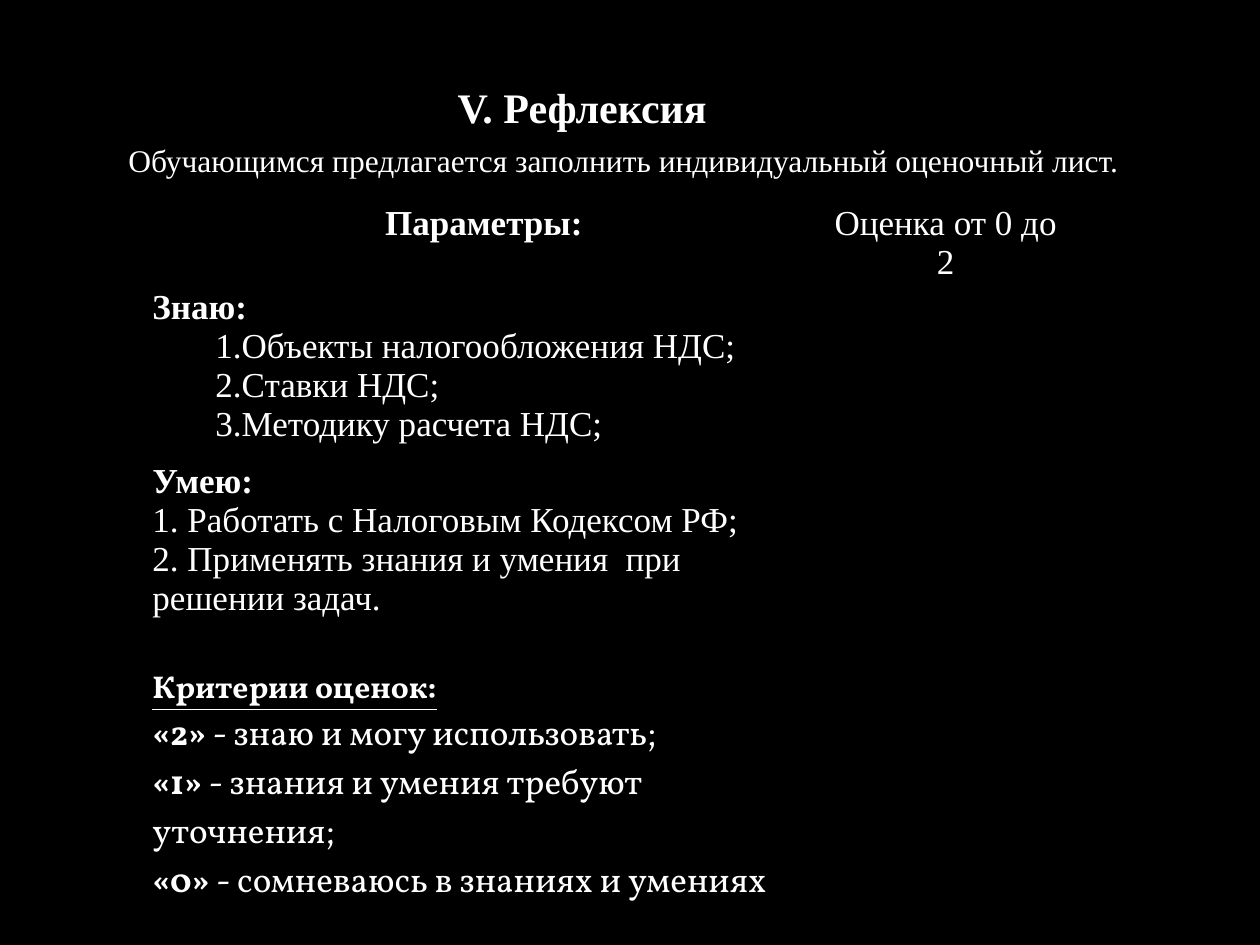
"""Builds the reflection slide with its self-assessment table."""
from lxml import etree
from pptx import Presentation
from pptx import util as u
from pptx.dml.color import RGBColor
from pptx.enum import text
from pptx.oxml.ns import qn

WHITE, BLACK = "FFFFFF", "000000"
SERIF, BOOK = "Times New Roman", "Vollkorn"
FIRST_LINE = u.Inches(0.49)


def color(hex_code):
    return RGBColor.from_string(hex_code)


def add_run(paragraph, words, size=20, bold=False, face=SERIF, underline=None):
    run = paragraph.add_run()
    run.text = words
    run.font.size, run.font.name = u.Pt(size), face
    run.font.bold, run.font.underline = bold, underline
    run.font.color.rgb = color(WHITE)


deck = Presentation()
deck.slide_width, deck.slide_height = u.Inches(10), u.Inches(7.5)
slide = deck.slides.add_slide(deck.slide_layouts[5])
slide.background.fill.solid()
slide.background.fill.fore_color.rgb = color(BLACK)

heading = slide.shapes.title
heading.left, heading.top = u.Inches(1.46), u.Inches(0.6)
heading.width, heading.height = u.Inches(5.83), u.Inches(0.5)
instruction = slide.shapes.add_textbox(
    u.Inches(0.43), u.Inches(1.07), u.Inches(9.21), u.Inches(0.4))
for box, words, size, bold, align in (
    (heading, "V. Рефлексия", 24, True, text.PP_ALIGN.CENTER),
    (instruction, "Обучающимся предлагается заполнить индивидуальный оценочный лист.",
     18, False, text.PP_ALIGN.LEFT),
):
    frame = box.text_frame
    frame.word_wrap = True
    frame.auto_size = text.MSO_AUTO_SIZE.NONE
    frame.vertical_anchor = text.MSO_ANCHOR.TOP
    line = frame.paragraphs[0]
    line.alignment = align
    line.space_before = u.Pt(0)
    line._p.get_or_add_pPr().set("indent", str(FIRST_LINE))
    add_run(line, words, size, bold)

columns, rows = (5.4, 1.93), (0.67, 1.38, 3.26)
sheet = slide.shapes.add_table(
    len(rows), len(columns), u.Inches(1.14), u.Inches(1.62),
    u.Inches(sum(columns)), u.Inches(sum(rows))).table
sheet.first_row = sheet.horz_banding = False
for column, width in zip(sheet.columns, columns):
    column.width = u.Inches(width)
for row, height in zip(sheet.rows, rows):
    row.height = u.Inches(height)

for cell in sheet.iter_cells():
    cell.margin_left = cell.margin_right = u.Inches(0.07)
    cell.margin_top = cell.margin_bottom = 0
    properties = cell._tc.get_or_add_tcPr()
    for side in ("a:lnL", "a:lnR", "a:lnT", "a:lnB"):
        border = etree.SubElement(properties, qn(side), w=str(u.Pt(1)))
        paint = etree.SubElement(border, qn("a:solidFill"))
        etree.SubElement(paint, qn("a:srgbClr"), val=BLACK)
    cell.fill.background()

for column, (words, bold) in enumerate((("Параметры:", True), ("Оценка от 0 до 2", False))):
    label = sheet.cell(0, column).text_frame.paragraphs[0]
    label.alignment = text.PP_ALIGN.CENTER
    add_run(label, words, bold=bold)

skills = (
    (1, "Знаю:", 0.5, ("1.Объекты налогообложения НДС;", "2.Ставки НДС;",
                       "3.Методику расчета НДС;")),
    (2, "Умею:", 0, ("1. Работать с Налоговым Кодексом РФ;",
                     "2. Применять знания и умения  при решении задач.")),
)
for row, group, indent, items in skills:
    frame = sheet.cell(row, 0).text_frame
    add_run(frame.paragraphs[0], group, bold=True)
    for item in items:
        line = frame.add_paragraph()
        line._p.get_or_add_pPr().set("marL", str(u.Inches(indent)))
        add_run(line, item)

criteria = sheet.cell(2, 0).text_frame
caption = criteria.add_paragraph()
caption.space_before = u.Pt(29)
add_run(caption, "Критерии оценок:", 18, True, BOOK, True)
for mark, meaning in (
    ("«2»", " - знаю и могу использовать;"),
    ("«1»", " - знания и умения требуют уточнения;"),
    ("«0»", " - сомневаюсь в знаниях и умениях"),
):
    line = criteria.add_paragraph()
    add_run(line, mark, bold=True, face=BOOK)
    add_run(line, meaning, face=BOOK)

deck.save("out.pptx")
